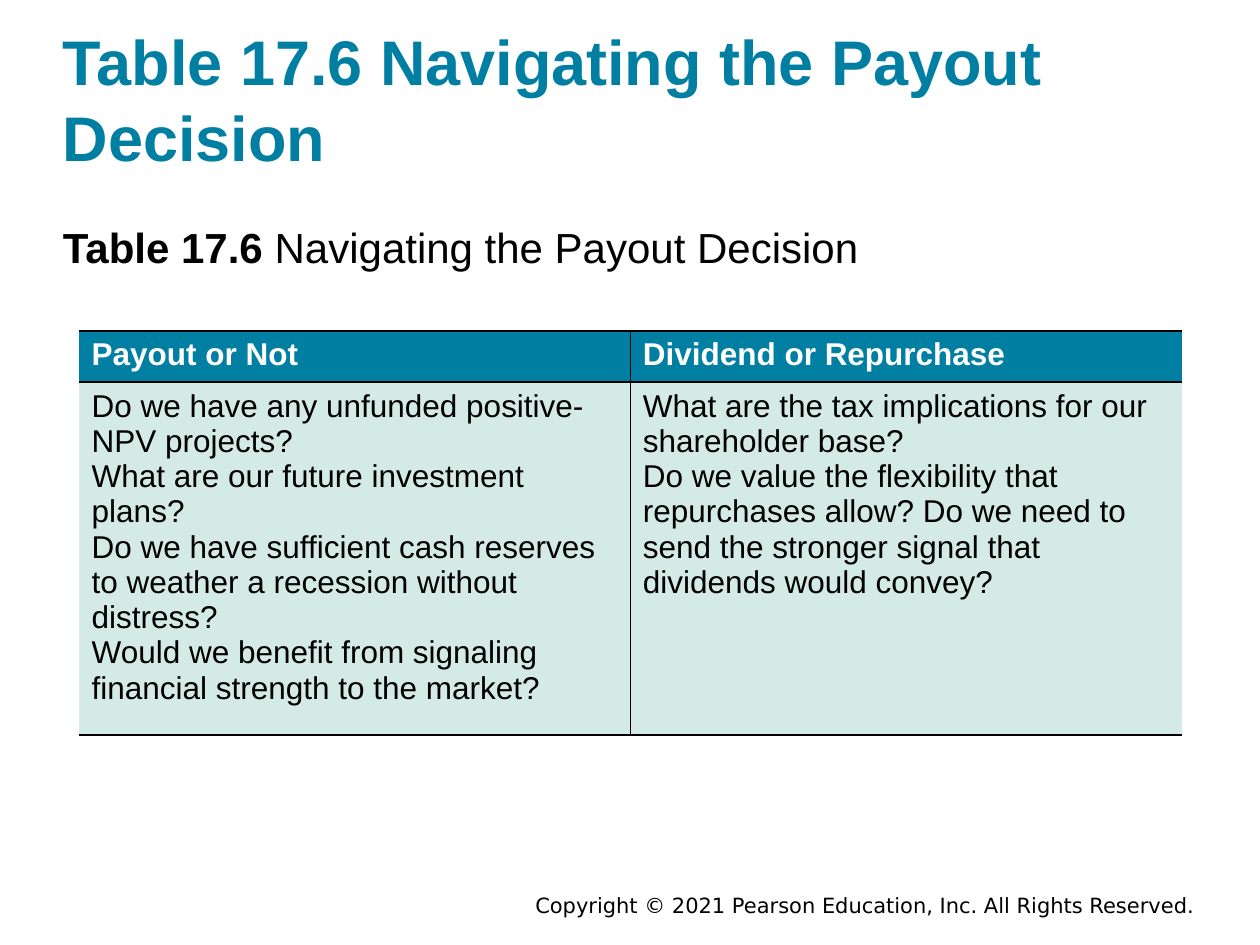
import pptx
import pptx.util
import pptx.dml.color
import pptx.enum.text
import pptx.oxml.ns
import lxml.etree

Pt = pptx.util.Pt
RGB = pptx.dml.color.RGBColor
ALIGN = pptx.enum.text.PP_ALIGN
ANCHOR = pptx.enum.text.MSO_ANCHOR
qn = pptx.oxml.ns.qn

TEAL = RGB(0x00, 0x7F, 0xA3)
MINT = RGB(0xD4, 0xEA, 0xE4)
BLACK = RGB(0, 0, 0)
WHITE = RGB(255, 255, 255)


def style(run, size, color, bold=False, name="Arial"):
    form = {"size": Pt(size), "bold": bold, "name": name}
    for key, value in form.items():
        setattr(run.font, key, value)
    run.font.color.rgb = color


def edge(cell, side, shown):
    props = cell._tc.get_or_add_tcPr()
    line = lxml.etree.SubElement(props, qn("a:ln" + side), w=str(Pt(1)))
    if shown:
        fill = lxml.etree.SubElement(line, qn("a:solidFill"))
        lxml.etree.SubElement(fill, qn("a:srgbClr"), val=str(BLACK))
    else:
        lxml.etree.SubElement(line, qn("a:noFill"))


deck = pptx.Presentation()
deck.slide_width, deck.slide_height = Pt(720), Pt(540)
slide = deck.slides.add_slide(deck.slide_layouts[6])

# Title, caption and footer: place, frame format, alignment, runs
texts = [
    ((36, 13, 648, 86.4),
     {"vertical_anchor": ANCHOR.BOTTOM, "margin_left": 0, "margin_right": 0,
      "margin_top": 0, "margin_bottom": 0},
     ALIGN.LEFT,
     [("Table 17.6 Navigating the Payout Decision", 36, TEAL, True)]),
    ((36, 126.7, 648, 36),
     {"margin_left": 0, "margin_right": 0, "margin_top": 0, "margin_bottom": 0},
     ALIGN.LEFT,
     [("Table 17.6 ", 24, BLACK, True),
      ("Navigating the Payout Decision", 24, BLACK)]),
    ((126, 506.2, 563.8, 21.6), {}, ALIGN.RIGHT,
     [("Copyright © 2021 Pearson Education, Inc. All Rights Reserved.",
       12, BLACK, False, "DejaVu Sans")]),
]
for place, form, align, runs in texts:
    frame = slide.shapes.add_textbox(*map(Pt, place)).text_frame
    frame.word_wrap = True
    for key, value in form.items():
        setattr(frame, key, value)
    para = frame.paragraphs[0]
    para.alignment = align
    for words, *look in runs:
        run = para.add_run()
        run.text = words
        style(run, *look)

# Table: each cell is a list of paragraphs
rows = [
    [["Payout or Not"], ["Dividend or Repurchase"]],
    [["Do we have any unfunded positive-NPV projects?",
      "What are our future investment plans?",
      "Do we have sufficient cash reserves to weather a recession without "
      "distress?",
      "Would we benefit from signaling financial strength to the market?"],
     ["What are the tax implications for our shareholder base?",
      "Do we value the flexibility that repurchases allow? Do we need to send "
      "the stronger signal that dividends would convey?"]],
]
looks = [(TEAL, WHITE, True), (MINT, BLACK, False)]
high = [29.2, 188.6]
table = slide.shapes.add_table(
    2, 2, Pt(45.2), Pt(189.2), Pt(630), Pt(sum(high))).table
for col in table.columns:
    col.width = Pt(315)
for r, row in enumerate(rows):
    table.rows[r].height = Pt(high[r])
    back, ink, bold = looks[r]
    for c, lines in enumerate(row):
        cell = table.cell(r, c)
        # Rules run across and between columns, with open outer sides
        for side, shown in (("L", c > 0), ("R", c < 1), ("T", True), ("B", True)):
            edge(cell, side, shown)
        cell.fill.solid()
        cell.fill.fore_color.rgb = back
        cell.text_frame.text = "\n".join(lines)
        for para in cell.text_frame.paragraphs:
            style(para.runs[0], 18, ink, bold)

deck.save("out.pptx")
